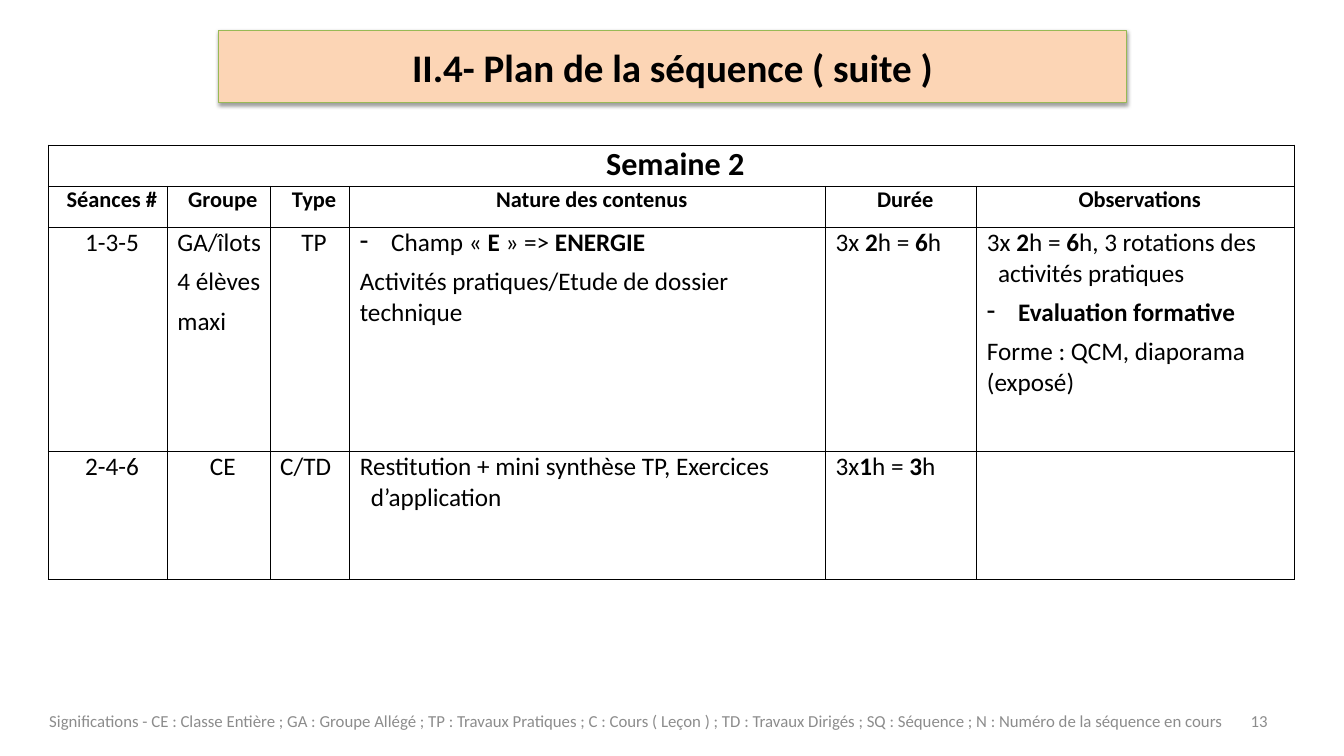
from lxml.etree import SubElement
from pptx import Presentation
from pptx.dml.color import RGBColor
from pptx.enum.text import MSO_ANCHOR as Anchor, PP_ALIGN as Align
from pptx.oxml import parse_xml
from pptx.oxml.ns import nsdecls, qn
from pptx.util import Inches, Pt

FONT = "Calibri"
COLUMN_WIDTHS = [1.18, 1.02, 0.79, 4.72, 1.5, 3.15]
ROW_HEIGHTS = [0.41, 0.41, 2.22, 1.27]
ROW_SIZES = [23, 16, 18, 18]
HEADERS = ["Séances #", "Groupe", "Type", "Nature des contenus", "Durée", "Observations"]

# Paragraph style: alignment, left margin, first-line indent
STYLES = {
    "centre": (Align.CENTER, 0.19, -0.11),
    "hanging": (Align.LEFT, 0.19, -0.11),
    "dash": (Align.LEFT, 0.39, -0.31),
    "flush": (Align.LEFT, 0.08, 0),
}

# Each cell lists (style, text); asterisks enclose bold text
ROWS = [
    [[("centre", "*Semaine 2*")]],
    [[("centre", f"*{header}*")] for header in HEADERS],
    [
        [("centre", "1-3-5")],
        [("hanging", "GA/îlots"), ("hanging", "4 élèves"), ("hanging", "maxi")],
        [("centre", "TP")],
        [("dash", "Champ « *E* » => *ENERGIE*"),
         ("flush", "Activités pratiques/Etude de dossier technique")],
        [("hanging", "3x *2*h = *6*h")],
        [("hanging", "3x *2*h = *6*h, 3 rotations des activités pratiques"),
         ("dash", "*Evaluation formative*"),
         ("flush", "Forme : QCM, diaporama (exposé)")],
    ],
    [
        [("centre", "2-4-6")],
        [("centre", "CE")],
        [("hanging", "C/TD")],
        [("hanging", "Restitution + mini synthèse TP, Exercices d’application")],
        [("hanging", "3x*1*h = *3*h")],
    ],
]

FOOTERS = [
    (9.56, 3.11, Align.RIGHT, "13"),
    (0.37, 11.89, Align.CENTER,
     "Significations - CE : Classe Entière ; GA : Groupe Allégé ; TP : Travaux Pratiques ; "
     "C : Cours ( Leçon ) ; TD : Travaux Dirigés ; SQ : Séquence ; "
     "N : Numéro de la séquence en cours"),
]


def color(value):
    return RGBColor.from_string(value)


def add_run(paragraph, text, size, bold=False, text_color="000000"):
    run = paragraph.add_run()
    run.text = text
    run.font.name = FONT
    run.font.size = Pt(size)
    run.font.bold = bold
    run.font.color.rgb = color(text_color)


presentation = Presentation()
presentation.slide_width = Inches(13.33)
presentation.slide_height = Inches(7.5)
slide = presentation.slides.add_slide(presentation.slide_layouts[5])

# Title
title = slide.shapes.title
title.left, title.top = Inches(2.17), Inches(0.3)
title.width, title.height = Inches(9), Inches(0.72)
title.fill.solid()
title.fill.fore_color.rgb = color("FCD5B5")
title.line.color.rgb = color("98B955")
title.line.width = Pt(0.75)
title.text_frame.vertical_anchor = Anchor.MIDDLE
title_paragraph = title.text_frame.paragraphs[0]
title_paragraph.alignment = Align.CENTER
add_run(title_paragraph, "II.4- Plan de la séquence ( suite )", 27.9, True)
title.element.spPr.append(parse_xml(
    f'<a:effectLst {nsdecls("a")}>'
    f'<a:outerShdw blurRad="{Pt(3.1)}" dist="{Pt(1.6)}" dir="5400000" rotWithShape="0">'
    '<a:srgbClr val="000000"><a:alpha val="38000"/></a:srgbClr>'
    '</a:outerShdw></a:effectLst>'))

# Table
table = slide.shapes.add_table(
    len(ROW_HEIGHTS), len(COLUMN_WIDTHS), Inches(0.48), Inches(1.44),
    Inches(sum(COLUMN_WIDTHS)), Inches(sum(ROW_HEIGHTS))).table
table.first_row = False
table.horz_banding = False
for column, width in zip(table.columns, COLUMN_WIDTHS):
    column.width = Inches(width)
for row, height in zip(table.rows, ROW_HEIGHTS):
    row.height = Inches(height)
table.cell(0, 0).merge(table.cell(0, len(COLUMN_WIDTHS) - 1))

for cell in table.iter_cells():
    cell.margin_left = cell.margin_right = Inches(0.02)
    cell.margin_top = cell.margin_bottom = 0
    cell.vertical_anchor = Anchor.TOP
    properties = cell._tc.get_or_add_tcPr()
    for side in ("lnL", "lnR", "lnT", "lnB"):
        properties.append(parse_xml(
            f'<a:{side} {nsdecls("a")} w="{Pt(1)}"><a:solidFill>'
            f'<a:srgbClr val="000000"/></a:solidFill></a:{side}>'))
    cell.fill.background()

for row_index, (row, size) in enumerate(zip(ROWS, ROW_SIZES)):
    for column_index, content in enumerate(row):
        text_frame = table.cell(row_index, column_index).text_frame
        for index, (style, text) in enumerate(content):
            paragraph = text_frame.add_paragraph() if index else text_frame.paragraphs[0]
            alignment, margin, indent = STYLES[style]
            paragraph.alignment = alignment
            paragraph.space_before = Pt(6)
            paragraph_properties = paragraph._p.get_or_add_pPr()
            paragraph_properties.set("marL", str(Inches(margin)))
            paragraph_properties.set("indent", str(Inches(indent)))
            if style == "dash":
                SubElement(paragraph_properties, qn("a:buChar"), char="-")
            for part_index, part in enumerate(text.split("*")):
                if part:
                    add_run(paragraph, part, size, part_index % 2 == 1)

# Page number and abbreviations
for left, width, alignment, text in FOOTERS:
    footer = slide.shapes.add_textbox(Inches(left), Inches(6.95), Inches(width), Inches(0.4))
    footer.text_frame.word_wrap = True
    footer.text_frame.vertical_anchor = Anchor.MIDDLE
    footer_paragraph = footer.text_frame.paragraphs[0]
    footer_paragraph.alignment = alignment
    add_run(footer_paragraph, text, 12, text_color="8C8C8C")

presentation.save("out.pptx")
